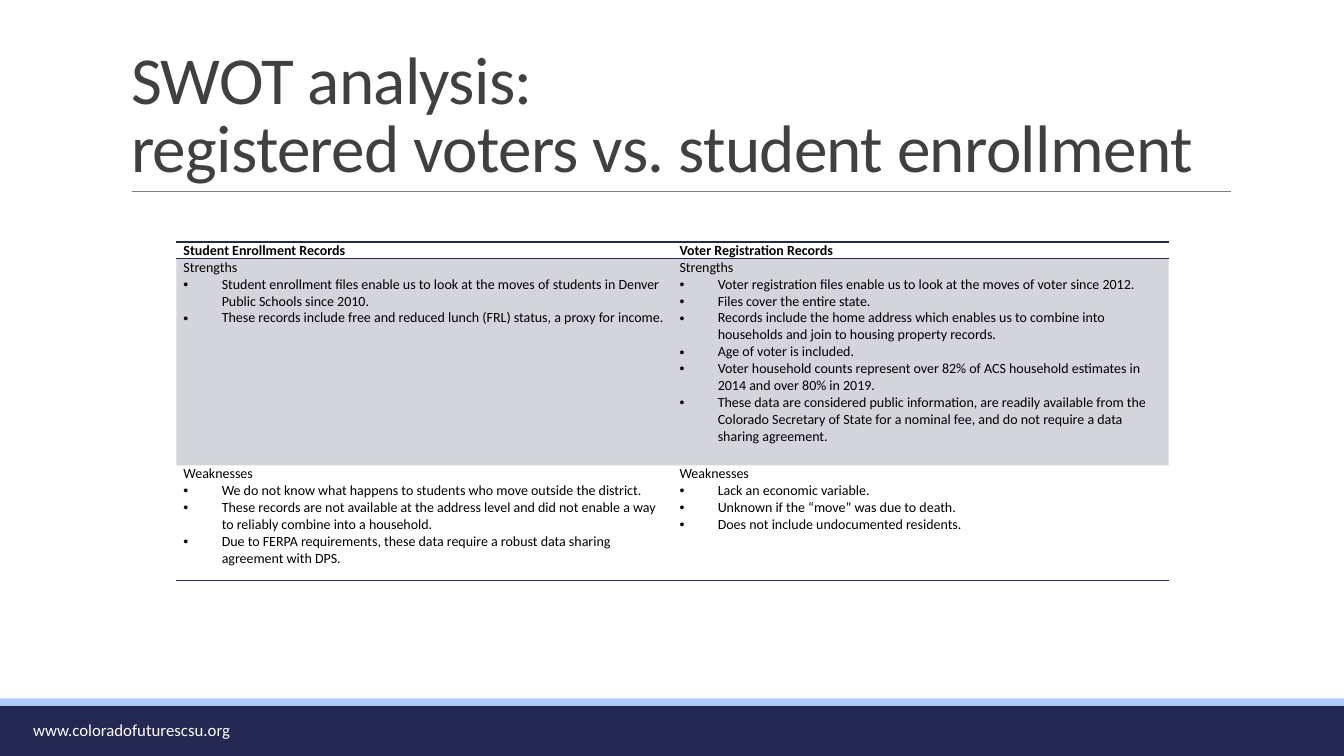
"""Build a slide comparing student enrollment and voter registration records."""
import pptx
import pptx.util
import pptx.dml.color
import pptx.enum.dml
import pptx.enum.shapes
import pptx.enum.text
import pptx.oxml.ns
from lxml import etree

Inches = pptx.util.Inches
Pt = pptx.util.Pt
qn = pptx.oxml.ns.qn
COLORS = {"navy": "242852", "sky": "ACCBF9", "rule": "808080",
          "title": "404040", "text": "000000", "white": "FFFFFF"}
PLAIN_TABLE_STYLE = "{2D5ABB26-0587-4C30-8999-92F81FD0307C}"


def write(para, text, size=10, color="text", bold=False, bullet=False, spacing=None):
    if bullet:
        properties = para._p.get_or_add_pPr()
        properties.set("marL", str(Inches(0.38)))
        properties.set("indent", str(-Inches(0.38)))
        etree.SubElement(properties, qn("a:buFont"), typeface="Arial")
        etree.SubElement(properties, qn("a:buChar"), char="•")
    para.text = text
    para.alignment = pptx.enum.text.PP_ALIGN.LEFT
    for span in para.runs:
        span.font.name = "Calibri"
        span.font.size = Pt(size)
        span.font.bold = bold
        span.font.color.rgb = pptx.dml.color.RGBColor.from_string(COLORS[color])
        if spacing is not None:
            span._r.get_or_add_rPr().set("spc", str(spacing))


deck = pptx.Presentation()
deck.slide_width = Inches(13.33)
deck.slide_height = Inches(7.5)
page = deck.slides.add_slide(deck.slide_layouts[5])

for top, height, color in [(7, 0.5, "navy"), (6.93, 0.07, "sky")]:
    bar = page.shapes.add_shape(pptx.enum.shapes.MSO_SHAPE.RECTANGLE,
                                0, Inches(top), deck.slide_width, Inches(height))
    bar.shadow.inherit = False
    bar.fill.solid()
    bar.fill.fore_color.rgb = pptx.dml.color.RGBColor.from_string(COLORS[color])
    bar.line.fill.background()

rule = page.shapes.add_connector(pptx.enum.shapes.MSO_CONNECTOR.STRAIGHT,
                                 Inches(1.31), Inches(1.9), Inches(12.21), Inches(1.9))
rule.line.color.rgb = pptx.dml.color.RGBColor.from_string(COLORS["rule"])
rule.line.width = Pt(0.5)
etree.SubElement(rule._element.spPr, qn("a:effectLst"))

footer = page.shapes.add_textbox(Inches(0.23), Inches(7.09), Inches(3.39), Inches(0.3))
footer.text_frame.word_wrap = True
write(footer.text_frame.paragraphs[0], "www.coloradofuturescsu.org", size=12, color="white")

title = page.shapes.title
title.left, title.top = Inches(1.2), Inches(0.31)
title.width, title.height = Inches(11), Inches(1.59)
title.text_frame.vertical_anchor = pptx.enum.text.MSO_ANCHOR.BOTTOM
title.text_frame.auto_size = pptx.enum.text.MSO_AUTO_SIZE.NONE
title.text_frame.word_wrap = True
heading = title.text_frame.paragraphs[0]
heading.line_spacing = 0.85
write(heading, "SWOT analysis:\vregistered voters vs. student enrollment",
      size=48, color="title", spacing=-50)

records = [
    [["Student Enrollment Records"], ["Voter Registration Records"]],
    [["Strengths",
      "Student enrollment files enable us to look at the moves of students in Denver Public Schools since 2010.",
      "These records include free and reduced lunch (FRL) status, a proxy for income."],
     ["Strengths",
      "Voter registration files enable us to look at the moves of voter since 2012.",
      "Files cover the entire state.",
      "Records include the home address which enables us to combine into households and join to housing property records.",
      "Age of voter is included.",
      "Voter household counts represent over 82% of ACS household estimates in 2014 and over 80% in 2019.",
      "These data are considered public information, are readily available from the Colorado Secretary of State for a nominal fee, and do not require a data sharing agreement."]],
    [["Weaknesses",
      "We do not know what happens to students who move outside the district.",
      "These records are not available at the address level and did not enable a way to reliably combine into a household.",
      "Due to FERPA requirements, these data require a robust data sharing agreement with DPS."],
     ["Weaknesses",
      "Lack an economic variable.",
      "Unknown if the “move” was due to death.",
      "Does not include undocumented residents."]],
]
row_heights = [0.16, 2.05, 1.14]
row_borders = [["a:lnT", "a:lnB"], [], ["a:lnB"]]

frame = page.shapes.add_table(3, 2, Inches(1.75), Inches(2.4), Inches(9.84), Inches(3.35))
table = frame.table
table.horz_banding = False
table._tbl.tblPr.find(qn("a:tableStyleId")).text = PLAIN_TABLE_STYLE
for row, height in zip(table.rows, row_heights):
    row.height = Inches(height)

for row_index, row_texts in enumerate(records):
    for column_index, lines in enumerate(row_texts):
        cell = table.cell(row_index, column_index)
        cell.margin_left = cell.margin_right = Inches(0.07)
        cell.margin_top = cell.margin_bottom = 0
        for side in row_borders[row_index]:
            border = etree.SubElement(cell._tc.get_or_add_tcPr(), qn(side), w=str(Pt(1)))
            border_fill = etree.SubElement(border, qn("a:solidFill"))
            etree.SubElement(border_fill, qn("a:srgbClr"), val=COLORS["navy"])
        if row_index == 1:
            cell.fill.solid()
            cell.fill.fore_color.rgb = pptx.dml.color.RGBColor.from_string(COLORS["navy"])
            tint = cell._tc.tcPr.find(".//" + qn("a:srgbClr"))
            etree.SubElement(tint, qn("a:alpha"), val="20000")
        else:
            cell.fill.background()
        for line_index, line in enumerate(lines):
            para = cell.text_frame.add_paragraph() if line_index else cell.text_frame.paragraphs[0]
            write(para, line, bold=row_index == 0, bullet=line_index > 0)

deck.save("out.pptx")
